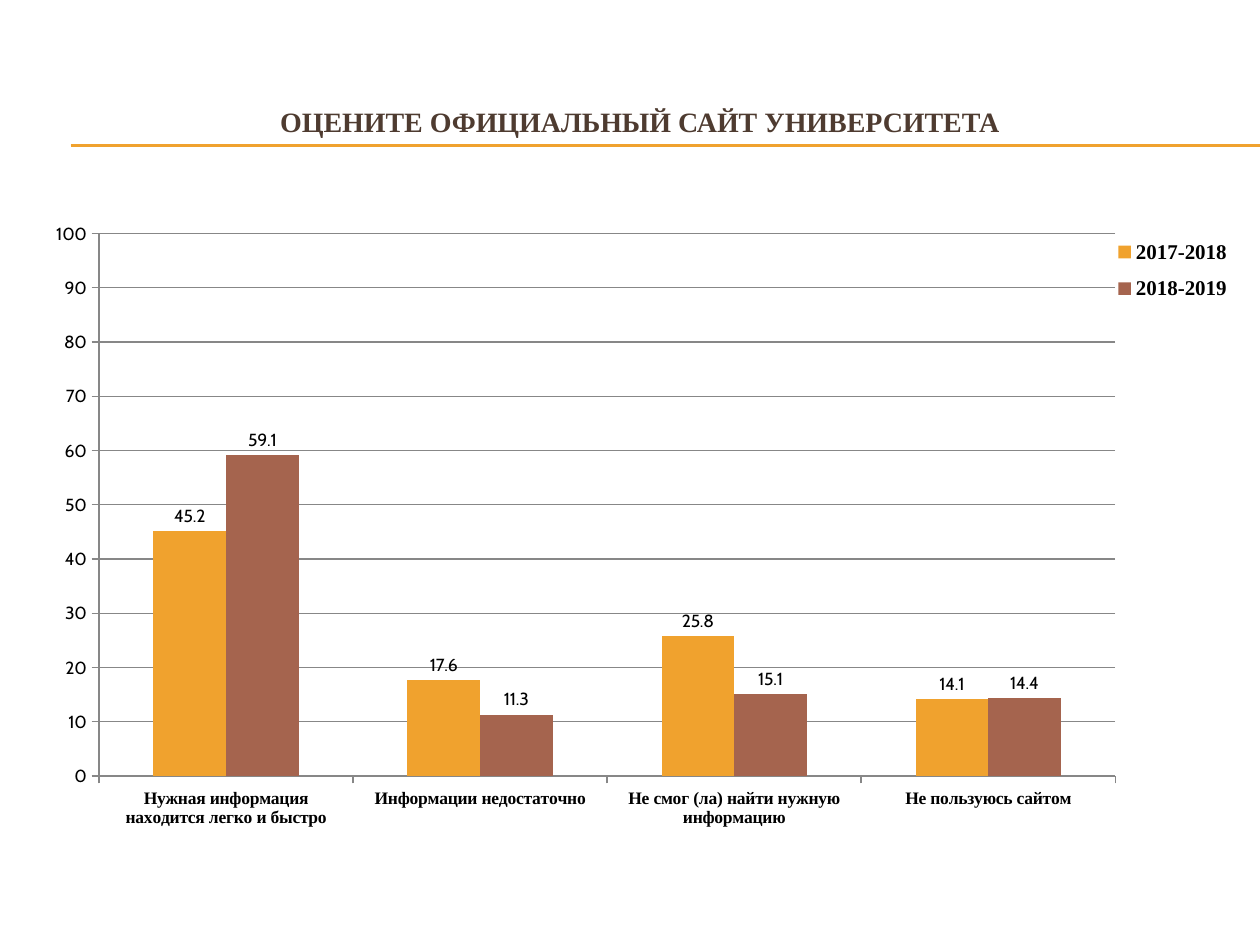
"""Build the slide on ratings of the university website."""
from lxml.etree import SubElement
from pptx import Presentation
from pptx.chart.data import CategoryChartData
from pptx.dml.color import RGBColor
from pptx.enum.chart import XL_CHART_TYPE, XL_LABEL_POSITION, XL_LEGEND_POSITION, XL_TICK_MARK
from pptx.enum.shapes import MSO_CONNECTOR
from pptx.enum.text import MSO_ANCHOR, PP_ALIGN
from pptx.oxml import parse_xml
from pptx.oxml.ns import nsdecls, qn
from pptx.util import Inches, Pt

GOLD, BROWN, DARK, BLACK, GRAY = "F0A22E", "A5644E", "4E3B30", "000000", "878787"
SERIF, SANS = "Times New Roman", "Cabin"


def color(code):
    return RGBColor.from_string(code)


def apply(item, style):
    for name, value in style.items():
        if name == "color":
            item.color.rgb = color(value)
        else:
            setattr(item, name, value)


def arrange(node, index, frame, inner=False):
    for old in node.findall(qn("c:layout")):
        node.remove(old)
    layout = parse_xml(f"<c:layout {nsdecls('c')}><c:manualLayout/></c:layout>")
    parts = [("layoutTarget", "inner")] if inner else []
    parts += [("xMode", "edge"), ("yMode", "edge")] + list(zip("xywh", frame))
    for tag, value in parts:
        SubElement(layout[0], qn(f"c:{tag}")).set("val", str(value))
    node.insert(index, layout)


class Deck:
    """Hold the text styles and the current slide."""

    title_font = {"name": SERIF, "size": Pt(16), "bold": True, "color": DARK}
    chart_font = {"name": SANS, "size": Pt(10), "bold": False, "color": BLACK}
    group_font = {"name": SERIF, "size": Pt(10), "bold": True, "color": BLACK}
    legend_font = {"name": SERIF, "size": Pt(12), "bold": True, "color": BLACK}
    rule = {"color": GOLD, "width": Pt(0.75)}
    grid = {"color": GRAY, "width": Pt(0.75)}

    def __init__(self):
        self.show = Presentation()
        self.show.slide_width, self.show.slide_height = Inches(10), Inches(7.5)
        self.slide = self.show.slides.add_slide(self.show.slide_layouts[5])

    def line(self, left, top, right):
        item = self.slide.shapes.add_connector(
            MSO_CONNECTOR.STRAIGHT, Inches(left), Inches(top), Inches(right), Inches(top))
        apply(item.line, self.rule)
        SubElement(item._element.spPr, qn("a:effectLst"))

    def title(self, text, left, top, width, height):
        item = self.slide.shapes.title
        apply(item, {"left": Inches(left), "top": Inches(top),
                     "width": Inches(width), "height": Inches(height)})
        frame = item.text_frame
        frame.text = text
        apply(frame, {"vertical_anchor": MSO_ANCHOR.MIDDLE, "word_wrap": True})
        para = frame.paragraphs[0]
        para.alignment = PP_ALIGN.CENTER
        apply(para.runs[0].font, self.title_font)

    def chart(self, groups, series, left, top, width, height):
        data = CategoryChartData(number_format="General")
        data.categories = groups
        for name, values, _ in series:
            data.add_series(name, values)
        chart = self.slide.shapes.add_chart(
            XL_CHART_TYPE.COLUMN_CLUSTERED, Inches(left), Inches(top),
            Inches(width), Inches(height), data).chart
        apply(chart, {"has_title": False, "has_legend": True})
        apply(chart.font, self.chart_font)
        self.bars(chart.plots[0], series)
        self.axes(chart)
        legend = chart.legend
        apply(legend, {"position": XL_LEGEND_POSITION.RIGHT, "include_in_layout": False})
        apply(legend.font, self.legend_font)
        arrange(legend._element, 1, (0.89, 0.02, 0.11, 0.14))
        area = chart._chartSpace.chart.plotArea
        arrange(area, 0, (0.048, 0.031, 0.849, 0.87), True)

    def bars(self, plot, series):
        apply(plot, {"gap_width": 150, "overlap": 0, "vary_by_categories": False,
                     "has_data_labels": True})
        apply(plot.data_labels, {"show_value": True,
                                 "position": XL_LABEL_POSITION.OUTSIDE_END})
        apply(plot.data_labels.font, self.chart_font)
        for bar, (_, _, shade) in zip(plot.series, series):
            bar.format.fill.solid()
            bar.format.fill.fore_color.rgb = color(shade)

    def axes(self, chart):
        pairs = ((chart.category_axis, self.group_font), (chart.value_axis, self.chart_font))
        for axis, font in pairs:
            apply(axis, {"major_tick_mark": XL_TICK_MARK.OUTSIDE,
                         "minor_tick_mark": XL_TICK_MARK.NONE})
            apply(axis.format.line, self.grid)
            apply(axis.tick_labels.font, font)
        axis = chart.value_axis
        apply(axis, {"minimum_scale": 0, "maximum_scale": 100, "major_unit": 10,
                     "has_major_gridlines": True})
        apply(axis.major_gridlines.format.line, self.grid)

    def save(self):
        self.show.save("out.pptx")


def main():
    deck = Deck()
    for top in (1.15, 1.16):
        deck.line(0.56, top, 10)
    deck.title("ОЦЕНИТЕ ОФИЦИАЛЬНЫЙ САЙТ УНИВЕРСИТЕТА", 0.33, 0.5, 9.5, 0.92)
    groups = ["Нужная информация находится легко и быстро", "Информации недостаточно",
              "Не смог (ла) найти нужную информацию", "Не пользуюсь сайтом"]
    series = [("2017-2018", (45.2, 17.6, 25.8, 14.1), GOLD),
              ("2018-2019", (59.1, 11.3, 15.1, 14.4), BROWN)]
    deck.chart(groups, series, 0.33, 1.7, 9.5, 4.95)
    deck.save()


if __name__ == "__main__":
    main()
